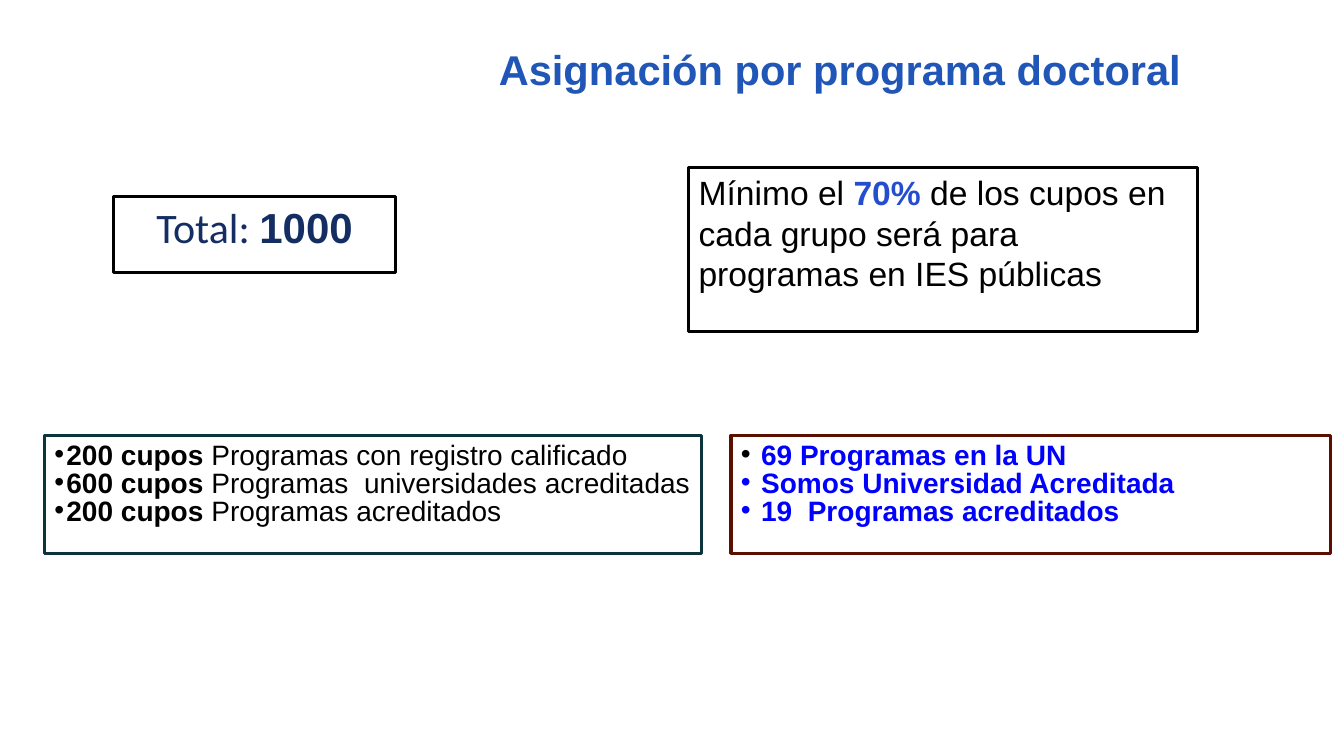
import pptx
import pptx.util
import pptx.dml.color
import pptx.enum.shapes
import pptx.enum.text
from lxml import etree

PX = 9144  # EMU per px, 100 px to the inch
COLORS = {
    "black": "000000", "title": "2056B7", "percent": "254ECE", "navy": "142E63",
    "blue": "0000FF", "teal": "0C343D", "maroon": "5B0F00",
}
ALIGN = pptx.enum.text.PP_ALIGN


def color_of(name):
    return pptx.dml.color.RGBColor.from_string(COLORS[name])


def write(para, text, size=20, color="black", bold=False, font="Arial"):
    span = para.add_run()
    span.text = text
    span.font.size = pptx.util.Pt(size)
    span.font.name = font
    span.font.bold = bold
    span.font.color.rgb = color_of(color)


deck = pptx.Presentation()
deck.slide_width, deck.slide_height = 1333 * PX, 750 * PX
page = deck.slides.add_slide(deck.slide_layouts[6])

# Title
title = page.shapes.add_textbox(455 * PX, 31 * PX, 757 * PX, 75 * PX)
title.text_frame.word_wrap = True
title.text_frame.vertical_anchor = pptx.enum.text.MSO_ANCHOR.MIDDLE
title.text_frame.paragraphs[0].alignment = ALIGN.CENTER
write(title.text_frame.paragraphs[0], "Asignación por programa doctoral",
      size=29.7, color="title", bold=True)

# Outlined boxes: left, top, width, height, line colour, top and bottom inset
BOXES = {
    "minimum": (683, 166, 505, 163, "black", 5),
    "university": (725, 432, 595, 117, "maroon", 10),
    "total": (113, 195, 279, 75, "black", 5),
    "quotas": (44, 432, 652, 117, "teal", 10),
}
frames = {}
for name, (left, top, width, height, line, inset) in BOXES.items():
    box = page.shapes.add_shape(pptx.enum.shapes.MSO_SHAPE.RECTANGLE,
                                left * PX, top * PX, width * PX, height * PX)
    box.shadow.inherit = False
    box.fill.background()
    box.line.color.rgb = color_of(line)
    box.line.width = pptx.util.Pt(2.25)
    frame = box.text_frame
    frame.word_wrap = True
    frame.vertical_anchor = pptx.enum.text.MSO_ANCHOR.TOP
    frame.margin_left = frame.margin_right = 10 * PX
    frame.margin_top = frame.margin_bottom = inset * PX
    frame.paragraphs[0].alignment = ALIGN.LEFT
    frames[name] = frame

# Minimum share
para = frames["minimum"].paragraphs[0]
write(para, "Mínimo el ", size=24)
write(para, "70% ", size=24, color="percent", bold=True)
write(para, "de los cupos en cada grupo será para programas en IES públicas", size=24)

# Total
para = frames["total"].paragraphs[0]
para.alignment = ALIGN.CENTER
write(para, "Total: ", size=30, color="navy", font="Calibri")
write(para, "1000", size=30, color="navy", bold=True)

# Bulleted lists: text margin, then bullet colour, bold text, text colour, plain text
LISTS = {
    "quotas": (12, [
        ("black", "200 cupos", "black", " Programas con registro calificado"),
        ("black", "600 cupos", "black", " Programas  universidades acreditadas"),
        ("black", "200 cupos", "black", " Programas acreditados"),
    ]),
    "university": (20, [
        ("black", "69 Programas en la UN", "blue", ""),
        ("blue", "Somos Universidad Acreditada", "blue", ""),
        ("blue", "19  Programas acreditados", "blue", ""),
    ]),
}
for name, (margin, items) in LISTS.items():
    frame = frames[name]
    for index, (bullet, strong, color, plain) in enumerate(items):
        para = frame.add_paragraph() if index else frame.paragraphs[0]
        para.alignment = ALIGN.LEFT
        props = para._p.get_or_add_pPr()
        props.set("marL", str(margin * PX))
        props.set("indent", str(-(margin + 2) * PX))
        for tag, key, value in (("buClr", None, None), ("buFont", "typeface", "Arial"),
                                ("buChar", "char", "•")):
            part = etree.SubElement(props, pptx.oxml.ns.qn("a:" + tag))
            if key:
                part.set(key, value)
            else:
                etree.SubElement(part, pptx.oxml.ns.qn("a:srgbClr")).set("val", COLORS[bullet])
        para.line_spacing = 0.75
        para.space_before = pptx.util.Pt(2 if index else 0)
        write(para, strong, color=color, bold=True)
        if plain:
            write(para, plain)

deck.save("out.pptx")
